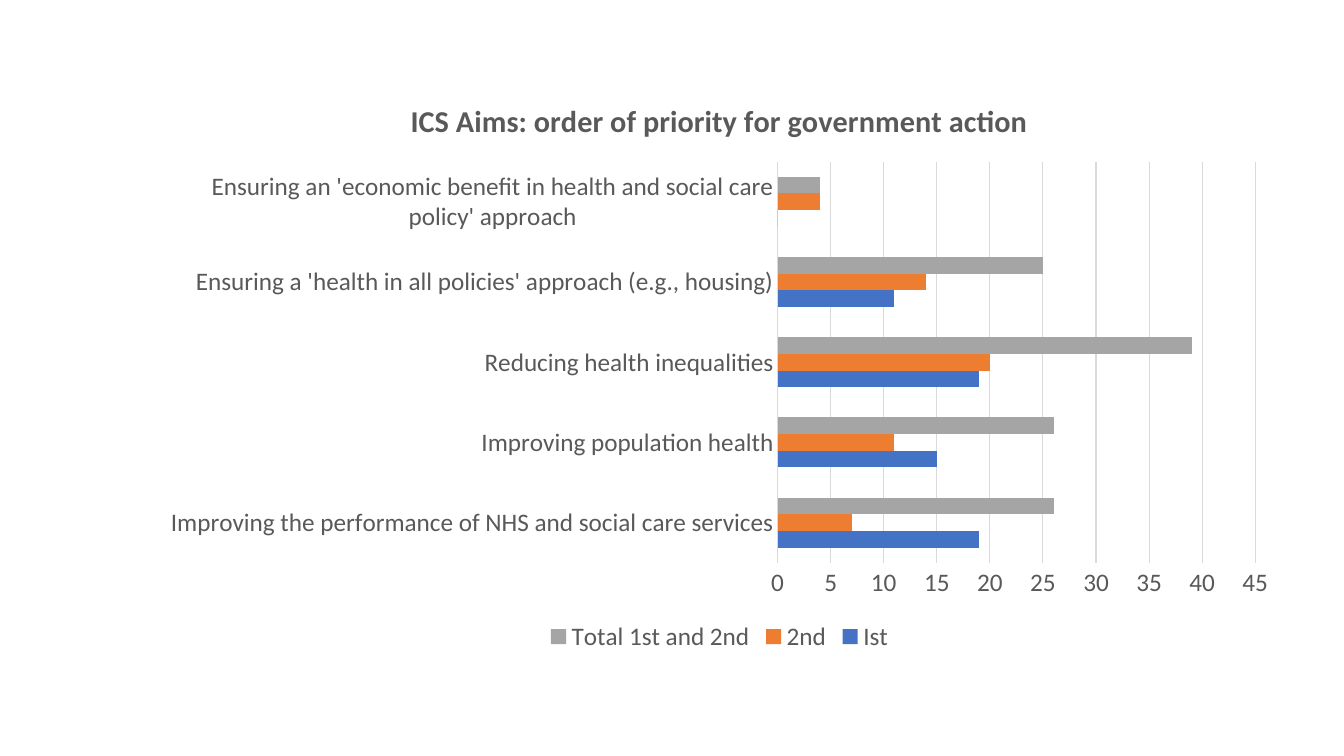
from pptx import Presentation
from pptx.chart.data import CategoryChartData as Data
from pptx.dml.color import RGBColor as Rgb
from pptx.enum.chart import XL_CHART_TYPE as Kind, XL_LEGEND_POSITION as Spot
from pptx.enum.chart import XL_TICK_MARK as Tick
from pptx.util import Emu, Pt

SCALE = 914400 / 100.8
GREY, PALE = "595959", "D9D9D9"
AIMS = [
    "Improving the performance of NHS and social care services",
    "Improving population health",
    "Reducing health inequalities",
    "Ensuring a 'health in all policies' approach (e.g., housing)",
    "Ensuring an 'economic benefit in health and social care policy' approach",
]
RANKS = [
    ("Ist", (19, 15, 19, 11, 0), "4472C4"),
    ("2nd", (7, 11, 20, 14, 4), "ED7D31"),
    ("Total 1st and 2nd", (26, 26, 39, 25, 4), "A5A5A5"),
]


def px(n):
    """Turn pixels into EMU."""
    return Emu(round(n * SCALE))


def tint(code):
    """Turn a hex string into a colour."""
    return Rgb.from_string(code)


def style(font, size=18, color=GREY, bold=False):
    """Format a font."""
    font.name, font.size, font.bold = "Calibri", Pt(size), bold
    font.color.rgb = tint(color)


def write(frame, text, **form):
    """Put formatted text into a frame."""
    run = frame.paragraphs[0].add_run()
    run.text = text
    style(run.font, **form)


def rule(line, color=PALE):
    """Draw a thin line."""
    line.color.rgb = tint(color)
    line.width = Pt(0.75)


def set_axis(axis):
    """Format the labels and ticks of an axis."""
    axis.major_tick_mark = axis.minor_tick_mark = Tick.NONE
    style(axis.tick_labels.font)


def add_bars(slide, title, x, y, w, h):
    """Add the clustered bar chart."""
    data = Data()
    data.categories = AIMS
    for name, vals, _ in RANKS:
        data.add_series(name, vals)
    chart = slide.shapes.add_chart(
        Kind.BAR_CLUSTERED, px(x), px(y), px(w), px(h), data).chart
    style(chart.font, color="000000")
    chart.has_title = True
    write(chart.chart_title.text_frame, title, size=21.6, bold=True)
    chart.chart_title.include_in_layout = False

    plot = chart.plots[0]
    plot.gap_width, plot.overlap = 182, 0
    plot.vary_by_categories = False
    for bar, (_, _, color) in zip(plot.series, RANKS):
        bar.format.fill.solid()
        bar.format.fill.fore_color.rgb = tint(color)

    aims, count = chart.category_axis, chart.value_axis
    set_axis(aims)
    set_axis(count)
    rule(aims.format.line)
    count.format.line.fill.background()
    count.has_major_gridlines = True
    rule(count.major_gridlines.format.line)

    chart.has_legend = True
    chart.legend.position = Spot.BOTTOM
    chart.legend.include_in_layout = False
    style(chart.legend.font)


def main():
    """Build the slide."""
    deck = Presentation()
    deck.slide_width, deck.slide_height = px(1344), px(756)
    slide = deck.slides.add_slide(deck.slide_layouts[6])
    add_bars(slide, "ICS Aims: order of priority for government action",
             148, 77, 1143, 580)
    deck.save("out.pptx")


if __name__ == "__main__":
    main()
